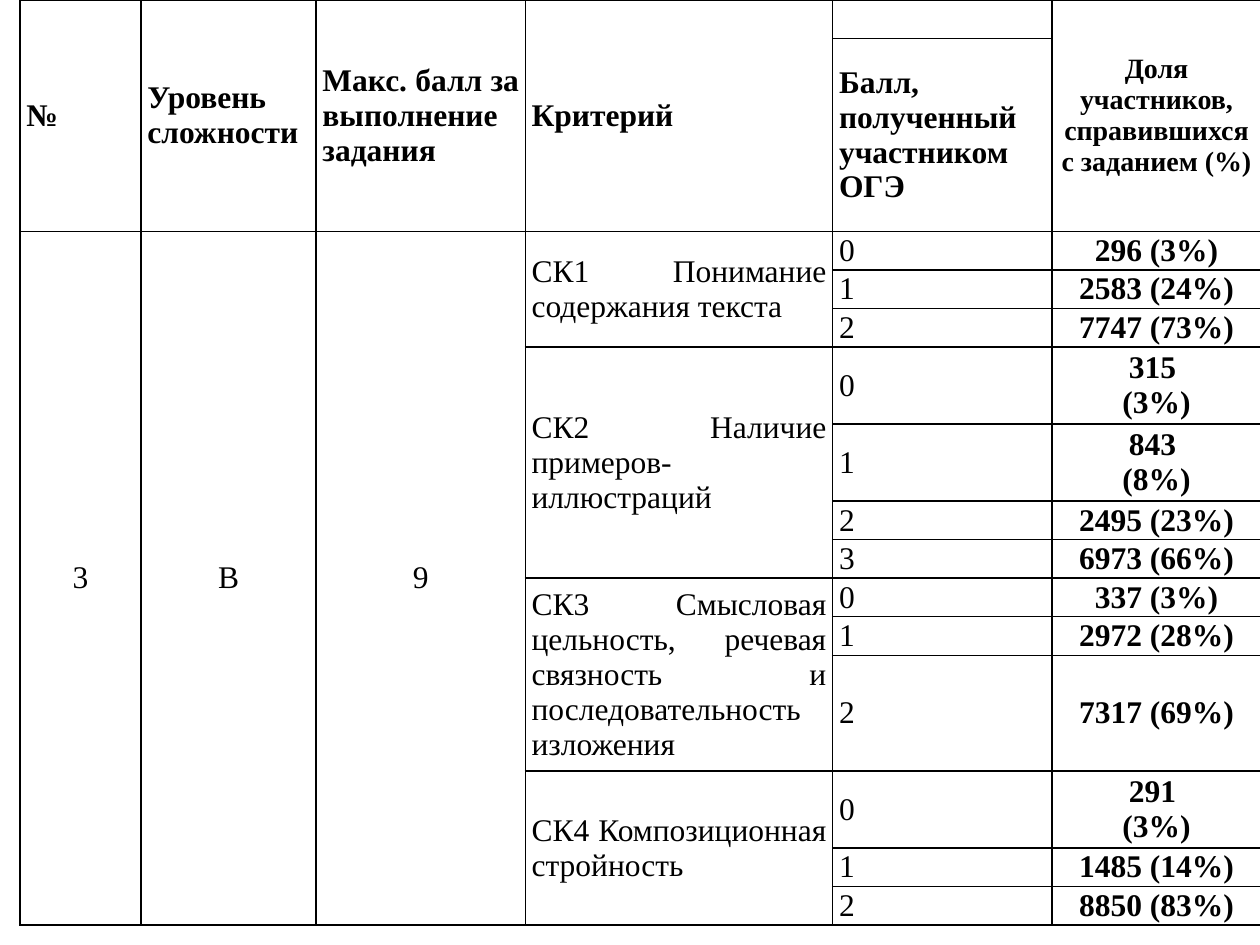
from lxml import etree
from pptx import Presentation
from pptx.dml.color import RGBColor
from pptx.enum.text import MSO_ANCHOR, PP_ALIGN
from pptx.oxml.ns import qn
from pptx.util import Inches, Pt

BLACK = RGBColor(0, 0, 0)
FONT = "Times New Roman"
CENTER, JUSTIFY = PP_ALIGN.CENTER, PP_ALIGN.JUSTIFY
MIDDLE = MSO_ANCHOR.MIDDLE

COLS = [0.96, 1.39, 1.66, 2.44, 1.74, 1.66]
LINE = 0.306  # height of a one-line row
ROW_LINES = [1, 5, 1, 1, 1, 2, 2, 1, 1, 1, 1, 3, 2, 1, 1]

HEADERS = ["№", "Уровень сложности", "Макс. балл за выполнение задания", "Критерий"]
TASK = ["3", "В", "9"]
# Each criterion with the share of participants for scores 0, 1, 2...
CRITERIA = [
    ("СК1 Понимание содержания текста",
     ["296 (3%)", "2583 (24%)", "7747 (73%)"]),
    ("СК2 Наличие примеров-иллюстраций",
     ["315 \n(3%)", "843 \n(8%)", "2495 (23%)", "6973 (66%)"]),
    ("СК3 Смысловая цельность, речевая связность и последовательность изложения",
     ["337 (3%)", "2972 (28%)", "7317 (69%)"]),
    ("СК4 Композиционная стройность",
     ["291 \n(3%)", "1485 (14%)", "8850 (83%)"]),
]


def style_cell(cell):
    cell.margin_left = cell.margin_right = Inches(0.05)
    cell.margin_top = cell.margin_bottom = 0
    cell.vertical_anchor = MIDDLE
    tcPr = cell._tc.get_or_add_tcPr()
    for side in ("a:lnL", "a:lnR", "a:lnT", "a:lnB"):
        ln = etree.SubElement(tcPr, qn(side), w=str(Pt(1)))
        fill = etree.SubElement(ln, qn("a:solidFill"))
        etree.SubElement(fill, qn("a:srgbClr"), val=str(BLACK))
    cell.fill.background()


def write(row, col, text, align=JUSTIFY, bold=False, size=18, span=1):
    cell = table.cell(row, col)
    if span > 1:
        cell.merge(table.cell(row + span - 1, col))
    tf = cell.text_frame
    for i, line in enumerate(text.split("\n")):
        p = tf.add_paragraph() if i else tf.paragraphs[0]
        p.alignment = align
        r = p.add_run()
        r.text = line
        r.font.name = FONT
        r.font.size = Pt(size)
        r.font.bold = bold
        r.font.color.rgb = BLACK


prs = Presentation()
prs.slide_width, prs.slide_height = Inches(10), Inches(7.5)
s = prs.slides.add_slide(prs.slide_layouts[6])

# Table grid
frame = s.shapes.add_table(len(ROW_LINES), len(COLS), Inches(0.16), 0,
                           Inches(sum(COLS)), Inches(LINE * sum(ROW_LINES)))
table = frame.table
table.first_row = table.horz_banding = False
for column, width in zip(table.columns, COLS):
    column.width = Inches(width)
for row, lines in zip(table.rows, ROW_LINES):
    row.height = Inches(LINE * lines)
for cell in table.iter_cells():
    style_cell(cell)

# Header
for col, text in enumerate(HEADERS):
    write(0, col, text, bold=True, span=2)
write(1, 4, "Балл, полученный участником ОГЭ", bold=True)
write(0, 5, "Доля участников, справившихся с заданием (%)", CENTER, True, 16, 2)

# Task columns
for col, text in enumerate(TASK):
    write(2, col, text, CENTER, span=len(ROW_LINES) - 2)

# Criteria, scores and shares
top = 2
for criterion, shares in CRITERIA:
    write(top, 3, criterion, span=len(shares))
    for score, share in enumerate(shares):
        write(top + score, 4, str(score))
        write(top + score, 5, share, CENTER, True)
    top += len(shares)

prs.save("out.pptx")
